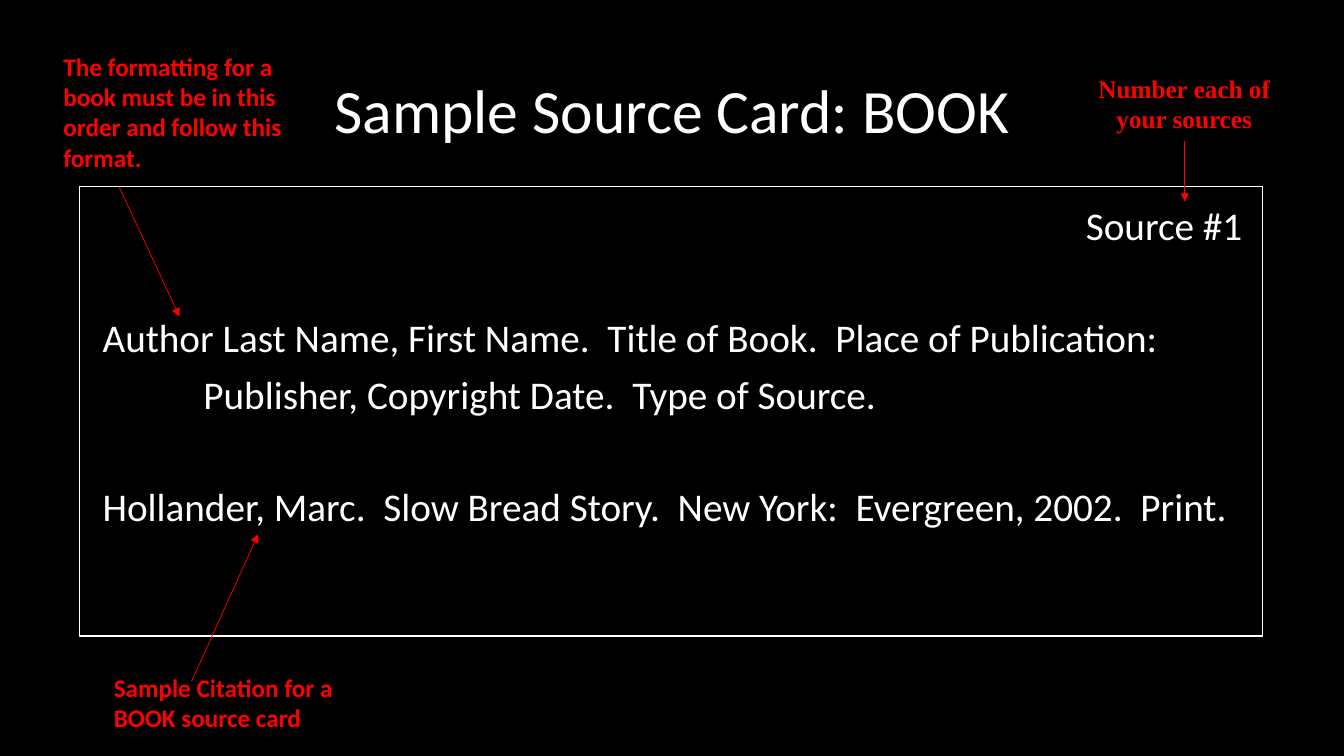
from lxml import etree
from pptx import Presentation
from pptx.dml.color import RGBColor
from pptx.enum import shapes, text
from pptx.oxml import ns
from pptx.util import Inches, Pt

BLACK = RGBColor(0, 0, 0)
WHITE = RGBColor(255, 255, 255)
RED = RGBColor(255, 0, 0)
LEFT, CENTER, RIGHT = text.PP_ALIGN.LEFT, text.PP_ALIGN.CENTER, text.PP_ALIGN.RIGHT

TITLE = "Sample Source Card: BOOK"
TITLE_BOX = (0.92, 0.4, 11.5, 1.45)
CARD_BOX = (0.79, 1.85, 11.73, 4.46)
CARD_TEXT_BOX = (0.92, 2, 11.5, 4.2)
LINE_GAP, SECTION_GAP = 10, 50
CARD_LINES = [
    ("Source #1", RIGHT, LINE_GAP, 0),
    ("Author Last Name, First Name.  Title of Book.  Place of Publication:", LEFT, SECTION_GAP, 0),
    ("Publisher, Copyright Date.  Type of Source.", LEFT, LINE_GAP, 1),
    ("Hollander, Marc.  Slow Bread Story.  New York:  Evergreen, 2002.  Print.", LEFT, SECTION_GAP, 0),
]
NOTES = [
    ("Number each of your sources", (10.69, 0.68, 2.11, 0.73),
     "Times New Roman", CENTER, (11.75, 1.4, 11.75, 2)),
    ("The formatting for a book must be in this order and follow this format.",
     (0.53, 0.46, 2.51, 1.31), "Calibri", LEFT, (1.18, 1.85, 1.78, 3.14)),
    ("Sample Citation for a BOOK source card", (1.03, 6.62, 2.61, 0.71),
     "Calibri", LEFT, (1.9, 6.76, 2.56, 5.3)),
]


def inches(values):
    return [Inches(v) for v in values]


def add_text(p, words, size, color, font="Calibri", align=LEFT, bold=False):
    p.alignment = align
    r = p.add_run()
    r.text = words
    r.font.name, r.font.size, r.font.bold = font, Pt(size), bold
    r.font.color.rgb = color


def add_box(s, box):
    tf = s.shapes.add_textbox(*inches(box)).text_frame
    tf.word_wrap = True
    return tf


def add_arrow(s, ends):
    line = s.shapes.add_connector(shapes.MSO_CONNECTOR.STRAIGHT, *inches(ends))
    line.line.color.rgb = RED
    line.line.width = Pt(0.5)
    etree.SubElement(line.line._get_or_add_ln(), ns.qn("a:tailEnd"), type="triangle")
    etree.SubElement(line._element.spPr, ns.qn("a:effectLst"))


def add_title(s):
    sp = s.shapes.title
    sp.left, sp.top, sp.width, sp.height = inches(TITLE_BOX)
    tf = sp.text_frame
    tf.vertical_anchor = text.MSO_ANCHOR.MIDDLE
    p = tf.paragraphs[0]
    p.line_spacing = 0.9
    add_text(p, TITLE, 44, WHITE, align=CENTER)


def add_card(s):
    sp = s.shapes.add_shape(shapes.MSO_SHAPE.RECTANGLE, *inches(CARD_BOX))
    sp.shadow.inherit = False
    sp.fill.background()
    sp.line.color.rgb = WHITE
    sp.line.width = Pt(1)
    tf = add_box(s, CARD_TEXT_BOX)
    for i, (words, align, gap, indent) in enumerate(CARD_LINES):
        p = tf.add_paragraph() if i else tf.paragraphs[0]
        p.line_spacing = 0.9
        p.space_before = Pt(gap)
        p._p.get_or_add_pPr().set("marL", str(Inches(indent)))
        add_text(p, words, 28, WHITE, align=align)


def add_notes(s):
    for words, box, font, align, ends in NOTES:
        tf = add_box(s, box)
        tf.auto_size = text.MSO_AUTO_SIZE.SHAPE_TO_FIT_TEXT
        add_text(tf.paragraphs[0], words, 18, RED, font, align, True)
        add_arrow(s, ends)


def main():
    prs = Presentation()
    prs.slide_width, prs.slide_height = inches((13.33, 7.5))
    s = prs.slides.add_slide(prs.slide_layouts[5])
    s.background.fill.solid()
    s.background.fill.fore_color.rgb = BLACK
    add_title(s)
    add_card(s)
    add_notes(s)
    prs.save("out.pptx")


if __name__ == "__main__":
    main()
